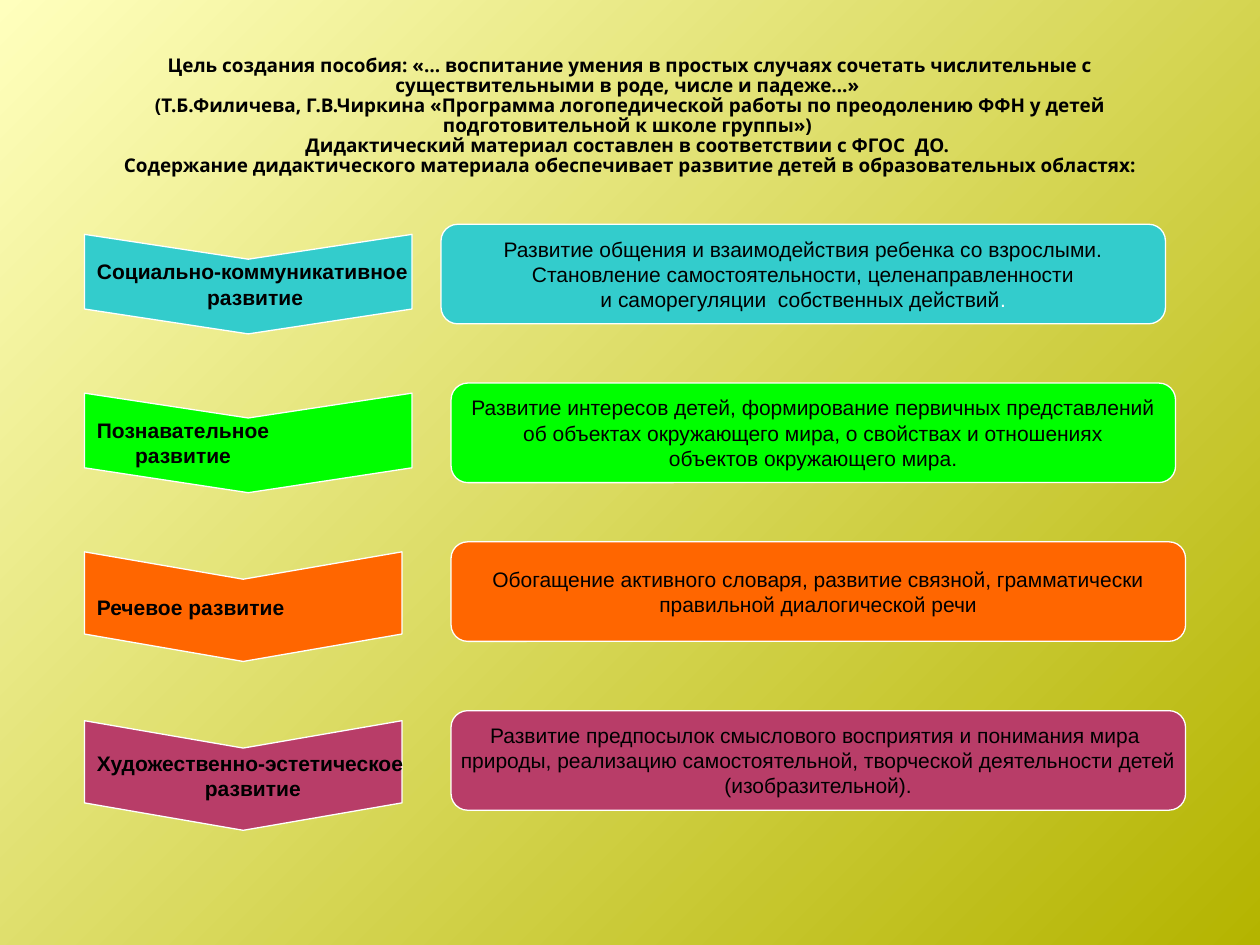
import pptx
import pptx.util
from pptx.dml.color import RGBColor
from pptx.enum.shapes import MSO_SHAPE
from pptx.enum.text import MSO_ANCHOR, PP_ALIGN
from pptx.util import Inches

COLORS = {
    "light": "FFFFBD", "dark": "B4B400", "text": "000000", "white": "FFFFFF",
    "social": "33CCCC", "cognitive": "00FF00", "speech": "FF6600", "art": "B83D68",
}

TITLE = [
    "Цель создания пособия: «… воспитание умения в простых случаях сочетать числительные с "
    "существительными в роде, числе и падеже…» ",
    "(Т.Б.Филичева, Г.В.Чиркина «Программа логопедической работы по преодолению ФФН у детей "
    "подготовительной к школе группы») ",
    "Дидактический материал составлен в соответствии с ФГОС  ДО. ",
    "Содержание дидактического материала обеспечивает развитие детей в образовательных областях:",
]

AREAS = [
    ("social", 1.78, 2.6, 0.79, 3.5, 5.75,
     ["Социально-коммуникативное", " развитие"],
     ["Развитие общения и взаимодействия ребенка со взрослыми.",
      " Становление самостоятельности, целенаправленности ",
      "и саморегуляции  собственных действий"]),
    ("cognitive", 3.04, 2.6, 0.79, 3.58, 5.75,
     ["Познавательное", "развитие"],
     ["Развитие интересов детей, формирование первичных представлений",
      " об объектах окружающего мира, о свойствах и отношениях ",
      "объектов окружающего мира."]),
    ("speech", 4.3, 2.52, 0.87, 3.58, 5.83,
     ["Речевое развитие"],
     ["Обогащение активного словаря, развитие связной, грамматически",
      "правильной диалогической речи"]),
    ("art", 5.64, 2.52, 0.87, 3.58, 5.83,
     ["Художественно-эстетическое ", "развитие"],
     ["Развитие предпосылок смыслового восприятия и понимания мира ",
      "природы, реализацию самостоятельной, творческой деятельности детей",
      "(изобразительной)."]),
]


class Deck:
    """Holds the style and the current slide."""

    font, title_font = "Arial", "Open Sans"
    size, title_size = 12, 10.8
    chevron_left, chevron_drop, box_height = 0.67, 0.08, 0.79

    def __init__(self, slide):
        self.s = slide

    def color(self, name):
        return RGBColor.from_string(COLORS[name])

    def background(self):
        fill = self.s.background.fill
        fill.gradient()
        fill.gradient_angle = 315
        for stop, name, position in zip(fill.gradient_stops, ("light", "dark"), (0, 1)):
            stop.color.rgb = self.color(name)
            stop.position = position

    def style_run(self, r, font, size, bold, color="text"):
        r.font.name = font
        r.font.size = pptx.util.Pt(size)
        r.font.bold = bold
        r.font.color.rgb = self.color(color)

    def put_text(self, tf, lines, font, size, bold, wrap=False, spacing=None):
        tf.text = "\n".join(lines)
        tf.word_wrap = wrap
        tf.vertical_anchor = MSO_ANCHOR.MIDDLE
        for p in tf.paragraphs:
            p.alignment = PP_ALIGN.CENTER
            p.line_spacing = spacing
            for r in p.runs:
                self.style_run(r, font, size, bold)

    def title(self, lines):
        sp = self.s.shapes.add_textbox(Inches(0.5), Inches(0.3), Inches(9), Inches(1.25))
        self.put_text(sp.text_frame, lines, self.title_font, self.title_size, True, True, 0.88)

    def shape(self, kind, left, top, width, height, fill, adjustment):
        sp = self.s.shapes.add_shape(
            kind, Inches(left), Inches(top), Inches(width), Inches(height))
        sp.adjustments[0] = adjustment
        sp.shadow.inherit = False
        sp.fill.solid()
        sp.fill.fore_color.rgb = self.color(fill)
        sp.line.color.rgb = self.color("white")
        sp.line.width = pptx.util.Pt(0.75)
        return sp

    def chevron(self, top, width, height, fill, lines):
        shift = (width - height) / 2
        sp = self.shape(MSO_SHAPE.CHEVRON, self.chevron_left + shift,
                        top + self.chevron_drop - shift, height, width, fill, 0.25)
        sp.rotation = 90
        self.put_text(sp.text_frame, lines, self.font, self.size, True)
        body = sp.text_frame._txBody.bodyPr
        body.set("vert", "eaVert")
        body.set("rot", "10800000")

    def box(self, left, top, width, fill, lines):
        sp = self.shape(MSO_SHAPE.ROUNDED_RECTANGLE, left, top, width,
                        self.box_height, fill, 0.167)
        self.put_text(sp.text_frame, lines, self.font, self.size, False)
        return sp

    def white_stop(self, sp):
        r = sp.text_frame.paragraphs[-1].add_run()
        r.text = "."
        self.style_run(r, self.font, self.size, False, "white")


def main():
    prs = pptx.Presentation()
    prs.slide_width, prs.slide_height = Inches(10), Inches(7.5)
    deck = Deck(prs.slides.add_slide(prs.slide_layouts[6]))
    deck.background()
    deck.title(TITLE)
    for fill, top, width, height, left, box_width, name, description in AREAS:
        deck.chevron(top, width, height, fill, name)
        sp = deck.box(left, top, box_width, fill, description)
        if fill == "social":
            deck.white_stop(sp)
    prs.save("out.pptx")


if __name__ == "__main__":
    main()
